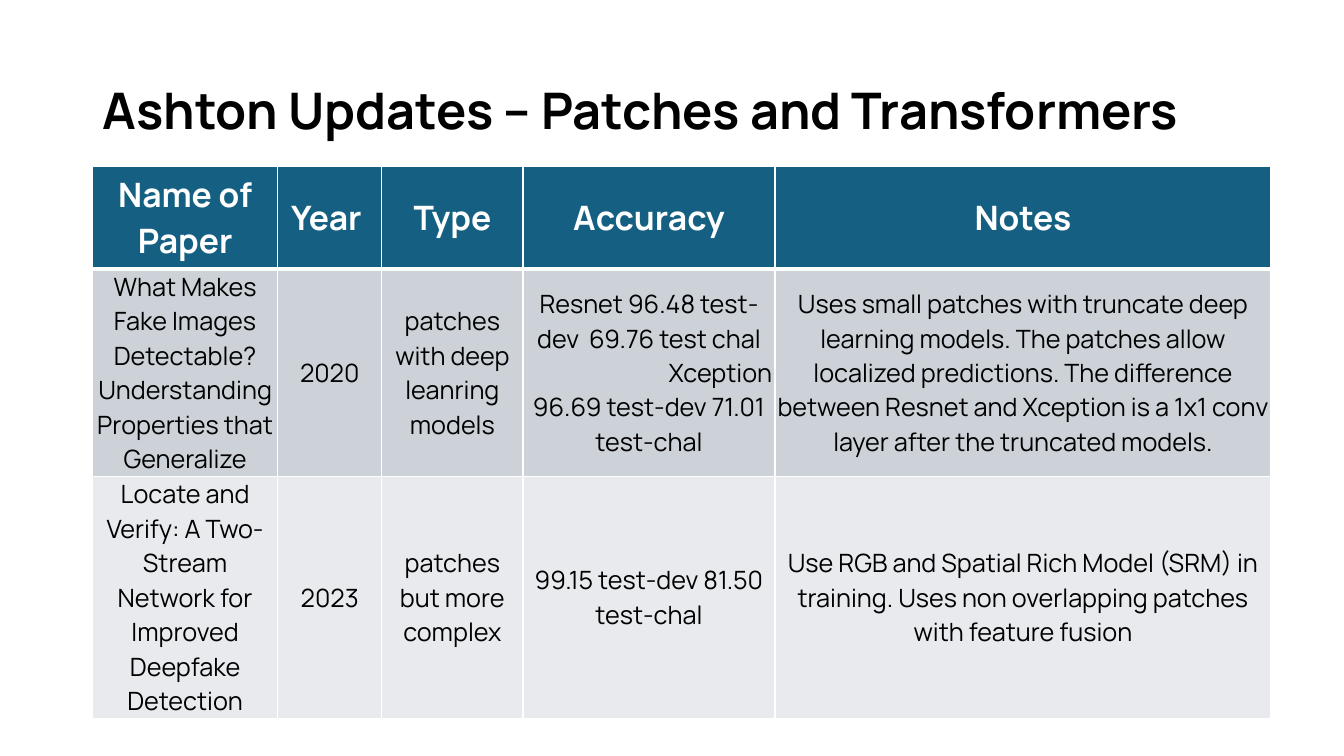
import lxml.etree
import pptx
import pptx.dml.color
import pptx.enum.text
import pptx.oxml.ns
import pptx.util

Cm = pptx.util.Cm
Pt = pptx.util.Pt
ALIGN = pptx.enum.text.PP_ALIGN
MIDDLE = pptx.enum.text.MSO_ANCHOR.MIDDLE

BLACK = pptx.dml.color.RGBColor(0x00, 0x00, 0x00)
WHITE = pptx.dml.color.RGBColor(0xFF, 0xFF, 0xFF)
TEAL = pptx.dml.color.RGBColor(0x15, 0x60, 0x82)
GREY = pptx.dml.color.RGBColor(0xCC, 0xD2, 0xD8)
PALE = pptx.dml.color.RGBColor(0xE8, 0xEA, 0xED)
FONT = "Manrope"

COLUMN_WIDTHS = [4.67, 2.62, 3.56, 6.35, 12.5]
ROW_HEIGHTS = [2.57, 5.22, 6.08]
ROW_FILLS = [TEAL, GREY, PALE]
XCEPTION_INDENT = Cm(3.6)

PAPERS = [
    ["Name of Paper", "Year ", "Type", "Accuracy", "Notes"],
    [
        "What Makes Fake Images Detectable? Understanding Properties that Generalize",
        "2020",
        "patches with deep leanring models",
        "Resnet 96.48 test-dev  69.76 test chal\nXception 96.69 test-dev 71.01 test-chal",
        "Uses small patches with truncate deep learning models. The patches allow "
        "localized predictions. The difference between Resnet and Xception is a 1x1 conv "
        "layer after the truncated models.",
    ],
    [
        "Locate and Verify: A Two-Stream Network for Improved Deepfake Detection",
        "2023",
        "patches but more complex",
        "99.15 test-dev 81.50 test-chal",
        "Use RGB and Spatial Rich Model (SRM) in training. Uses non overlapping patches "
        "with feature fusion",
    ],
]


def write_text(frame, text, *, size, color=BLACK, bold=False, align=ALIGN.LEFT,
               line_spacing=1.0, later_indent=0):
    frame.word_wrap = True
    for index, line in enumerate(text.split("\n")):
        para = frame.add_paragraph() if index else frame.paragraphs[0]
        para.alignment = align
        para.line_spacing = line_spacing
        if index and later_indent:
            properties = para._p.get_or_add_pPr()
            properties.set("marL", "0")
            properties.set("indent", str(int(later_indent)))
        span = para.add_run()
        span.text = line
        span.font.name = FONT
        span.font.size = Pt(size)
        span.font.bold = bold
        span.font.color.rgb = color


def add_border(cell, side, width):
    qualified = pptx.oxml.ns.qn
    properties = cell._tc.get_or_add_tcPr()
    line = lxml.etree.SubElement(properties, qualified(f"a:ln{side}"), w=str(int(Pt(width))))
    fill = lxml.etree.SubElement(line, qualified("a:solidFill"))
    lxml.etree.SubElement(fill, qualified("a:srgbClr"), val=str(WHITE))


def format_cell(cell, row):
    widths = {"L": 1, "R": 1, "T": 3 if row == 1 else 1, "B": 3 if row == 0 else 1}
    for side, width in widths.items():
        add_border(cell, side, width)
    cell.fill.solid()
    cell.fill.fore_color.rgb = ROW_FILLS[row]
    cell.vertical_anchor = MIDDLE
    cell.margin_left = cell.margin_right = cell.margin_top = Cm(0.02)
    cell.margin_bottom = 0


def add_title(page, text):
    title = page.shapes.title
    title.left, title.top, title.width, title.height = Cm(2.33), Cm(1.01), Cm(29.21), Cm(3.68)
    title.text_frame.auto_size = pptx.enum.text.MSO_AUTO_SIZE.NONE
    title.text_frame.vertical_anchor = MIDDLE
    write_text(title.text_frame, text, size=36, bold=True, line_spacing=0.9)


def add_paper_table(page):
    frame = page.shapes.add_table(
        len(PAPERS), len(COLUMN_WIDTHS), Cm(2.33), Cm(4.2),
        Cm(sum(COLUMN_WIDTHS)), Cm(sum(ROW_HEIGHTS)))
    table = frame.table
    for column, width in zip(table.columns, COLUMN_WIDTHS):
        column.width = Cm(width)
    for row, height in zip(table.rows, ROW_HEIGHTS):
        row.height = Cm(height)
    for row, texts in enumerate(PAPERS):
        header = row == 0
        for column, text in enumerate(texts):
            cell = table.cell(row, column)
            format_cell(cell, row)
            write_text(cell.text_frame, text, size=24 if header else 18,
                       color=WHITE if header else BLACK, bold=header,
                       align=ALIGN.CENTER, later_indent=XCEPTION_INDENT)


def main():
    deck = pptx.Presentation()
    deck.slide_width = Cm(33.87)
    deck.slide_height = Cm(19.05)
    page = deck.slides.add_slide(deck.slide_layouts[5])
    add_title(page, "Ashton Updates – Patches and Transformers")
    add_paper_table(page)
    deck.save("out.pptx")


if __name__ == "__main__":
    main()
